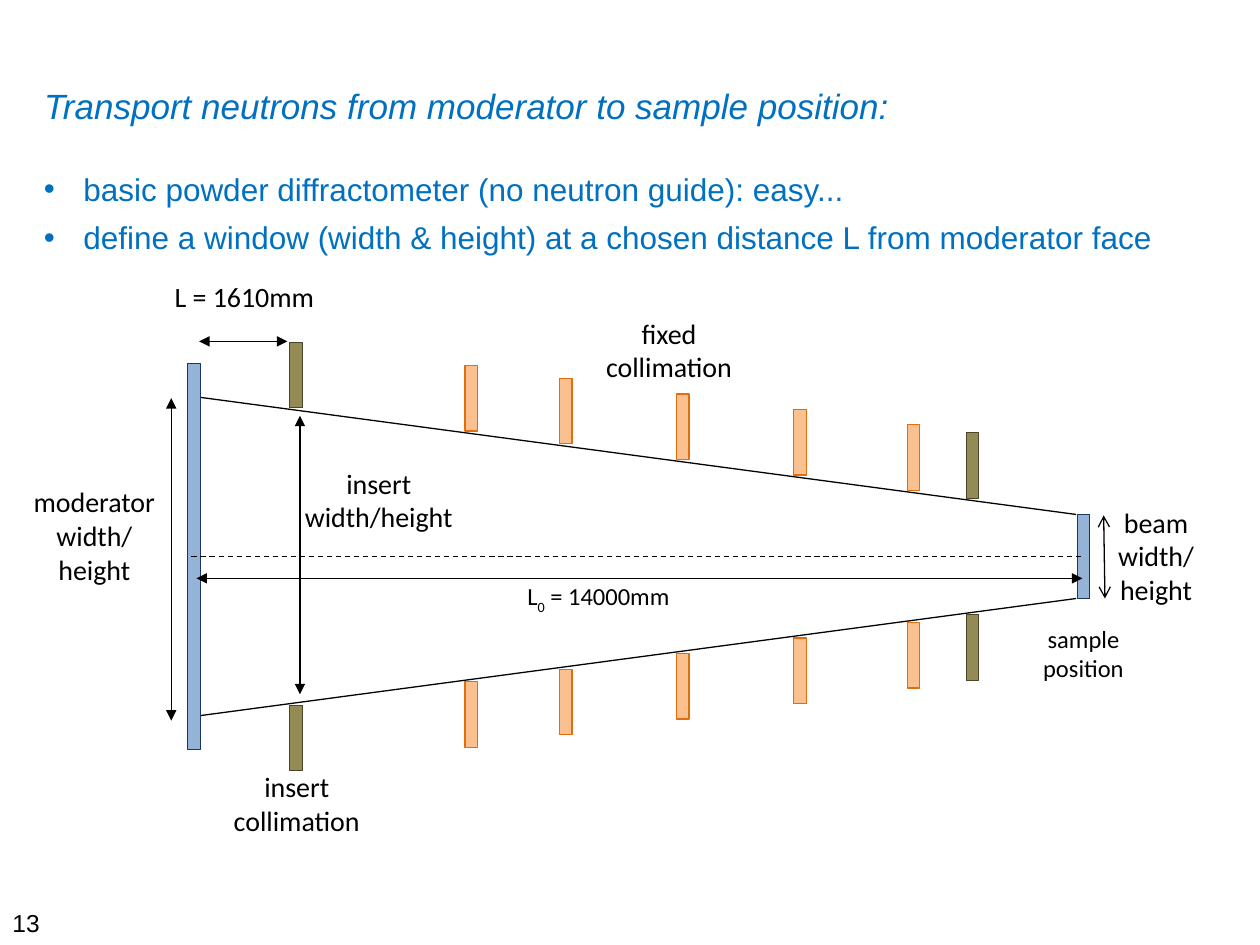
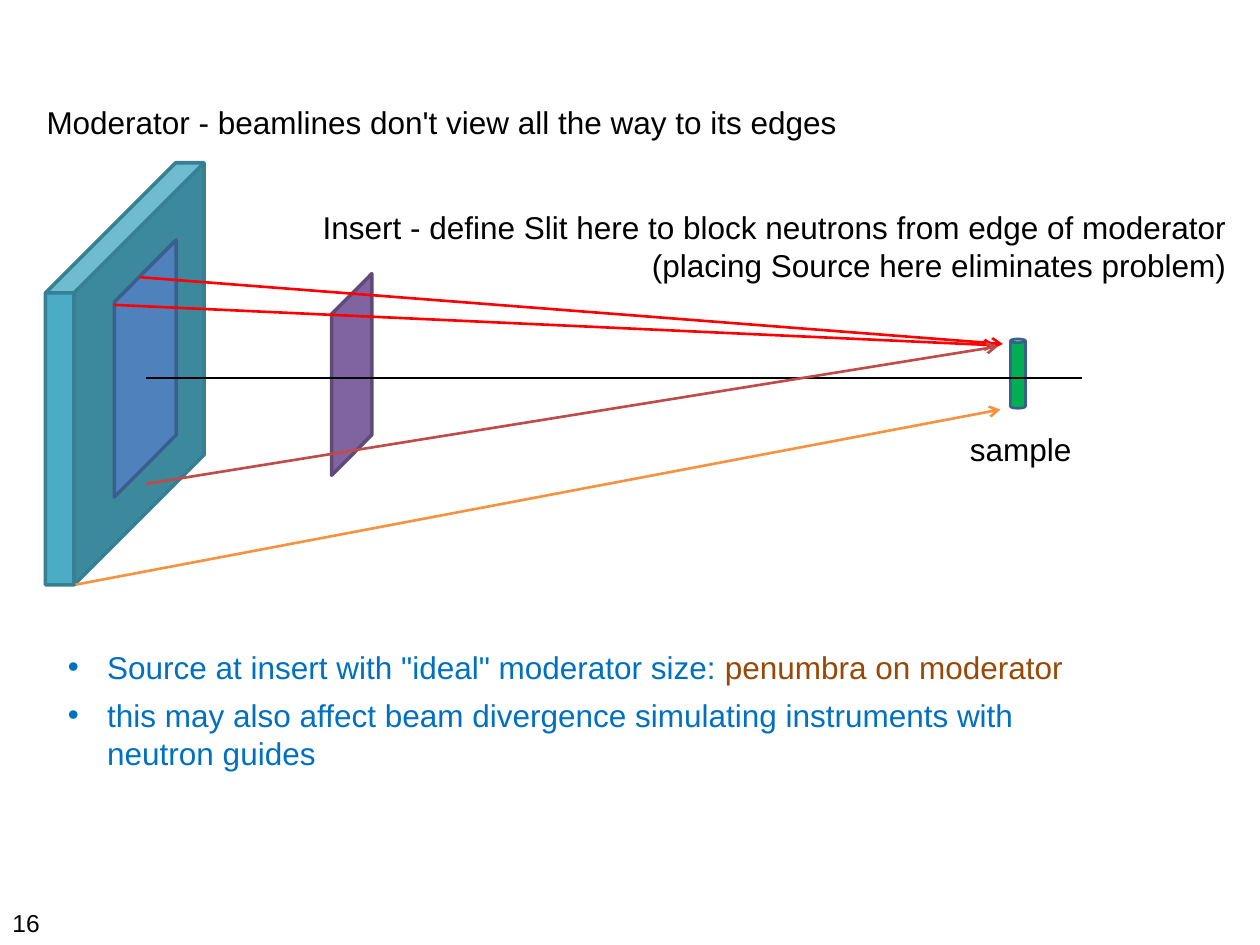
from lxml import etree
from pptx import Presentation
from pptx.dml.color import RGBColor
from pptx.enum import dml, shapes, text
from pptx.oxml import ns
from pptx.util import Pt

HUES = {
    "ink": "000000", "blue": "0070C0", "brown": "984807", "red": "FF0000",
    "rust": "BF4C48", "amber": "F69240", "green": "00B050",
    "olive": "948A54", "bark": "4A452A", "peach": "FAC090", "flame": "E46C0A",
    "sky": "95B3D7", "navy": "17375E", "teal": "4BACC6", "pine": "377F92",
    "plum": "8064A2", "grape": "5F4A78", "steel": "4F81BD", "slate": "3A5F8C",
}
KIND = shapes.MSO_SHAPE
SIDE = text.PP_ALIGN
BLADE = (7.2, 37.4)


def hue(name):
    """Return the named colour."""
    return RGBColor.from_string(HUES[name])


def node(host, tag, **attrs):
    """Append a drawing element to the host."""
    item = etree.SubElement(host, ns.qn(tag))
    for key, val in attrs.items():
        item.set(key, val)
    return item


def write(para, words, size=18, color="ink", font="Arial", slant=False, base=0):
    """Add text to a paragraph, one run for each line."""
    for num, line in enumerate(words.split("\n")):
        if num:
            para.add_line_break()
        run = para.add_run()
        run.text = line
        run.font.size, run.font.name = Pt(size), font
        run.font.italic = slant
        run.font.color.rgb = hue(color)
        if base:
            run._r.get_or_add_rPr().set("baseline", str(base))


def setup(frame, inset=7.2):
    """Make a text frame wrap from its top with even insets."""
    frame.word_wrap = True
    frame.auto_size = text.MSO_AUTO_SIZE.NONE
    frame.vertical_anchor = text.MSO_ANCHOR.TOP
    frame.margin_left = frame.margin_right = Pt(inset)
    frame.margin_top = frame.margin_bottom = Pt(3.6)


def place(shape, box):
    """Move a shape to a box given in points."""
    shape.left, shape.top, shape.width, shape.height = map(Pt, box)


def label(slide, box, runs, align=SIDE.LEFT, inset=7.2, **style):
    """Add a text box with one paragraph of (words, baseline) runs."""
    frame = slide.shapes.add_textbox(*map(Pt, box)).text_frame
    setup(frame, inset)
    para = frame.paragraphs[0]
    para.alignment = align
    for words, base in runs:
        write(para, words, base=base, **style)


def solid(slide, kind, box, fill, edge, width=0.75, adj=None):
    """Add a filled preset shape."""
    shape = slide.shapes.add_shape(kind, *map(Pt, box))
    shape.shadow.inherit = False
    shape.fill.solid()
    shape.fill.fore_color.rgb = hue(fill)
    shape.line.color.rgb = hue(edge)
    shape.line.width = Pt(width)
    if adj is not None:
        shape.adjustments[0] = adj
    return shape


def line(slide, x1, y1, x2, y2, color="ink", width=0.75, head=None, tail=None,
         dash=False):
    """Add a straight line with optional arrowheads."""
    link = slide.shapes.add_connector(
        shapes.MSO_CONNECTOR.STRAIGHT, *map(Pt, (x1, y1, x2, y2)))
    link.line.color.rgb = hue(color)
    link.line.width = Pt(width)
    if dash:
        link.line.dash_style = dml.MSO_LINE.DASH
    props = link._element.spPr
    stroke = props.find(ns.qn("a:ln"))
    for tag, tip in (("a:headEnd", head), ("a:tailEnd", tail)):
        if tip:
            node(stroke, tag, type=tip)
    node(props, "a:effectLst")


def bullets(slide, box, items):
    """Add a bulleted list; each item is a list of (words, colour)."""
    frame = slide.shapes.add_textbox(*map(Pt, box)).text_frame
    setup(frame)
    for num, item in enumerate(items):
        para = frame.add_paragraph() if num else frame.paragraphs[0]
        para.space_after = Pt(6)
        props = para._p.get_or_add_pPr()
        props.set("marL", str(Pt(22.5)))
        props.set("indent", str(-Pt(22.5)))
        node(props, "a:buFont", typeface="Arial")
        node(props, "a:buChar", char="•")
        for words, color in item:
            write(para, words, color=color)


def start(prs, number, title, box, **style):
    """Add a slide with its title and page number."""
    slide = prs.slides.add_slide(prs.slide_layouts[5])
    head = slide.shapes.title
    place(head, box)
    setup(head.text_frame)
    para = head.text_frame.paragraphs[0]
    para.alignment = SIDE.LEFT
    write(para, title, **style)
    label(slide, (0, 515.5, 76, 24.5), [(number, 0)], size=14)
    return slide


def plan(slide, box):
    """Draw the collimated beam from moderator to sample."""
    left, top = box[:2]
    near, far, axis = left + 102, left + 603, top + 162
    wide, slim = 91, 24
    thick, tall = BLADE

    for sign in (-1, 1):
        line(slide, near, axis + sign * wide, far, axis + sign * slim)

    rows = [(x, "olive", "bark") for x in (157.2, 543.8)]
    rows += [(x, "peach", "flame") for x in (257.3, 311.3, 378.2, 445.2, 510)]
    for x, fill, edge in rows:
        mid = left + x
        half = wide + (slim - wide) * (mid - near) / (far - near) + 1.4
        for y in (axis - half - tall, axis + half):
            solid(slide, KIND.RECTANGLE, (mid - thick / 2, y, thick, tall),
                  fill, edge)
    for x, high in ((near - 6.7, 220.3), (far + 0.6, 48.2)):
        solid(slide, KIND.RECTANGLE, (x, axis - high / 2, thick, high),
              "sky", "navy")

    line(slide, left + 97.4, axis, left + 607.2, axis, dash=True)
    for x1, y1, x2, y2, tip in (
            (101.8, 39.1, 152.2, 39.1, "triangle"),
            (159.4, 81.6, 159.4, 240.7, "triangle"),
            (100.3, 174.5, 606.5, 174.5, "triangle"),
            (85.9, 71.5, 85.9, 255.8, "triangle"),
            (618.7, 138.5, 619.4, 186, "arrow")):
        line(slide, left + x1, top + y1, left + x2, top + y2,
             head=tip, tail=tip)

    for x, y, w, h, size, runs in (
            (607.2, 129.1, 82.8, 65.5, 16, [("beam width/\nheight", 0)]),
            (106.8, 280.3, 101.5, 46, 16, [("insert collimation", 0)]),
            (326.4, 21.1, 87.8, 46, 16, [("fixed collimation", 0)]),
            (72.2, 0.2, 110.9, 26.6, 16, [("L = 1610mm", 0)]),
            (0.2, 117.6, 83.5, 65.5, 16, [("moderator width/ height", 0)]),
            (569, 196.8, 76.3, 41, 14, [("sample position", 0)]),
            (271.7, 172.3, 116.6, 24.5, 14,
             [("L", 0), ("0", -30000), (" = 14000mm", 0)]),
            (152.2, 106.8, 104.4, 46, 16, [("insert width/height", 0)])):
        label(slide, (left + x, top + y, w, h), runs, SIDE.CENTER, 4.3,
              size=size, font="Calibri")


def panel(slide, x, y, long, short, fill, edge):
    """Add an upright slanted panel centred on a point."""
    shape = solid(slide, KIND.PARALLELOGRAM,
                  (x - long / 2, y - short / 2, long, short), fill, edge, 2,
                  1.004)
    shape.rotation = 90
    shape._element.spPr.get_or_add_xfrm().set("flipH", "1")


def scene(slide, box):
    """Draw the moderator, the insert and the rays to the sample."""
    left, top = box[:2]
    solid(slide, KIND.CUBE, (left, top, 90.7, 241.2), "teal", "pine", 2, 0.82)
    panel(slide, left + 175, top + 121, 115.2, 23, "plum", "grape")
    panel(slide, left + 57, top + 117.6, 146.9, 35.3, "steel", "slate")
    solid(slide, KIND.CAN, (left + 551.4, top + 100.7, 8.6, 39.6),
          "green", "slate", 1.5)
    for x1, y1, x2, y2, color, tip in (
            (57.5, 123, 592.5, 123, "ink", None),
            (53.9, 65.4, 547.1, 103.6, "red", "arrow"),
            (38.8, 81.2, 542.8, 104.3, "red", "arrow"),
            (17.2, 241.1, 545.7, 141, "amber", "arrow"),
            (57.5, 183.5, 544.2, 105, "rust", "arrow")):
        line(slide, left + x1, top + y1, left + x2, top + y2, color, 1.5,
             tail=tip)
    label(slide, (left + 139.6, top + 22.2, 542.2, 51),
          [("Insert - define Slit here to block neutrons from edge of moderator"
            "\n(placing Source here eliminates problem)", 0)], SIDE.RIGHT)
    label(slide, (left + 500.3, top + 149, 113.8, 28.8), [("sample", 0)],
          SIDE.CENTER)


def main():
    """Build both slides and save them."""
    prs = Presentation()
    prs.slide_width, prs.slide_height = Pt(720), Pt(540)

    slide = start(prs, "13",
                  "Transport neutrons from moderator to sample position:",
                  (18, 44.6, 666, 32), size=20, color="blue", slant=True)
    plan(slide, (12, 156, 690, 327))
    bullets(slide, (18, 93.6, 666, 65), [
        [("basic powder diffractometer (no neutron guide): easy...", "blue")],
        [("define a window (width & height) at a chosen distance L "
          "from moderator face", "blue")]])

    slide = start(prs, "16",
                  "Moderator - beamlines don't view all the way to its edges",
                  (19.4, 55.4, 497.5, 28.8))
    scene(slide, (26, 93, 682, 242))
    bullets(slide, (31.7, 366.5, 609, 78.5), [
        [("Source at insert with \"ideal\" moderator size: ", "blue"),
         ("penumbra on moderator", "brown")],
        [("this may also affect beam divergence simulating instruments with "
          "neutron guides", "blue")]])
    prs.save("out.pptx")


if __name__ == "__main__":
    main()
